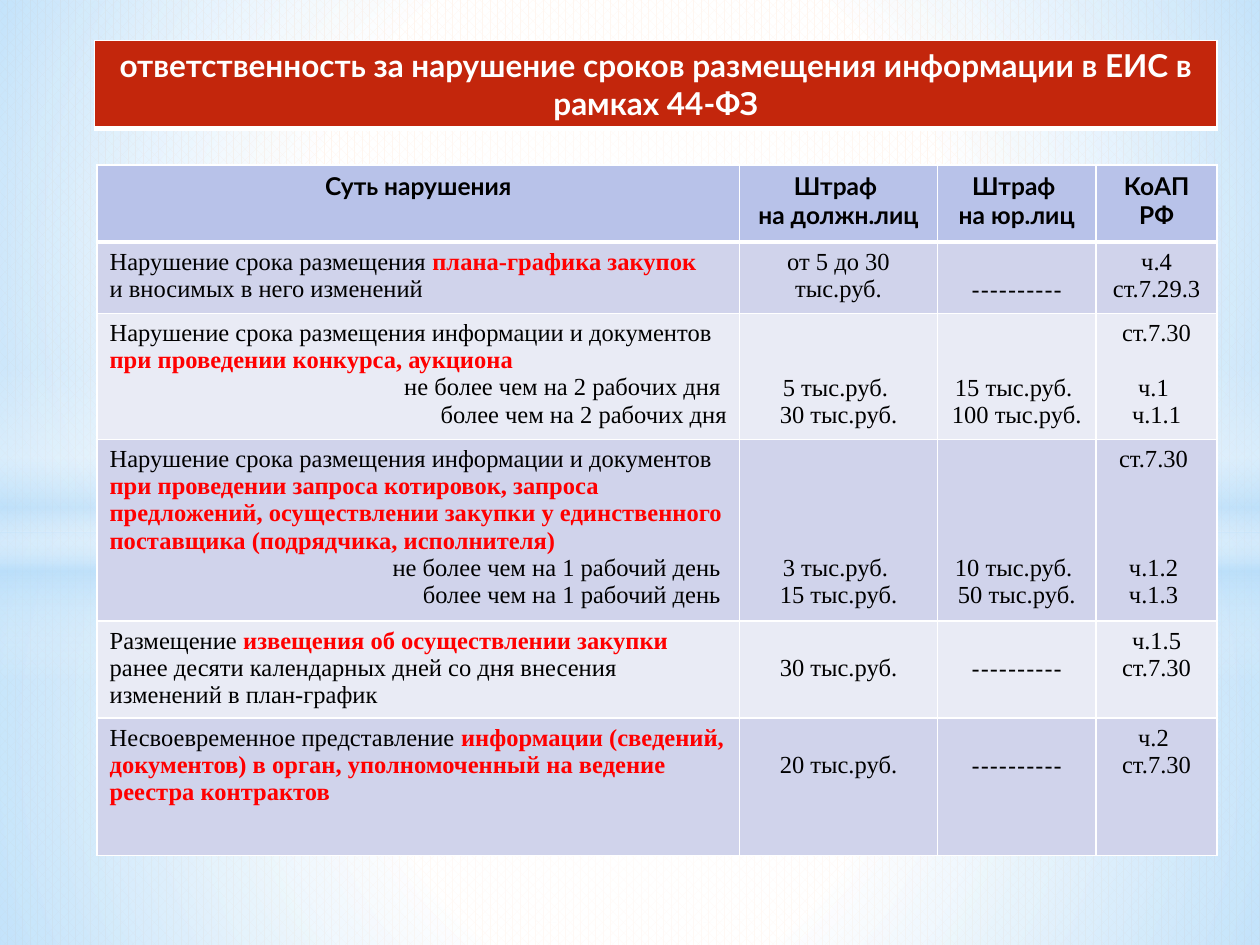
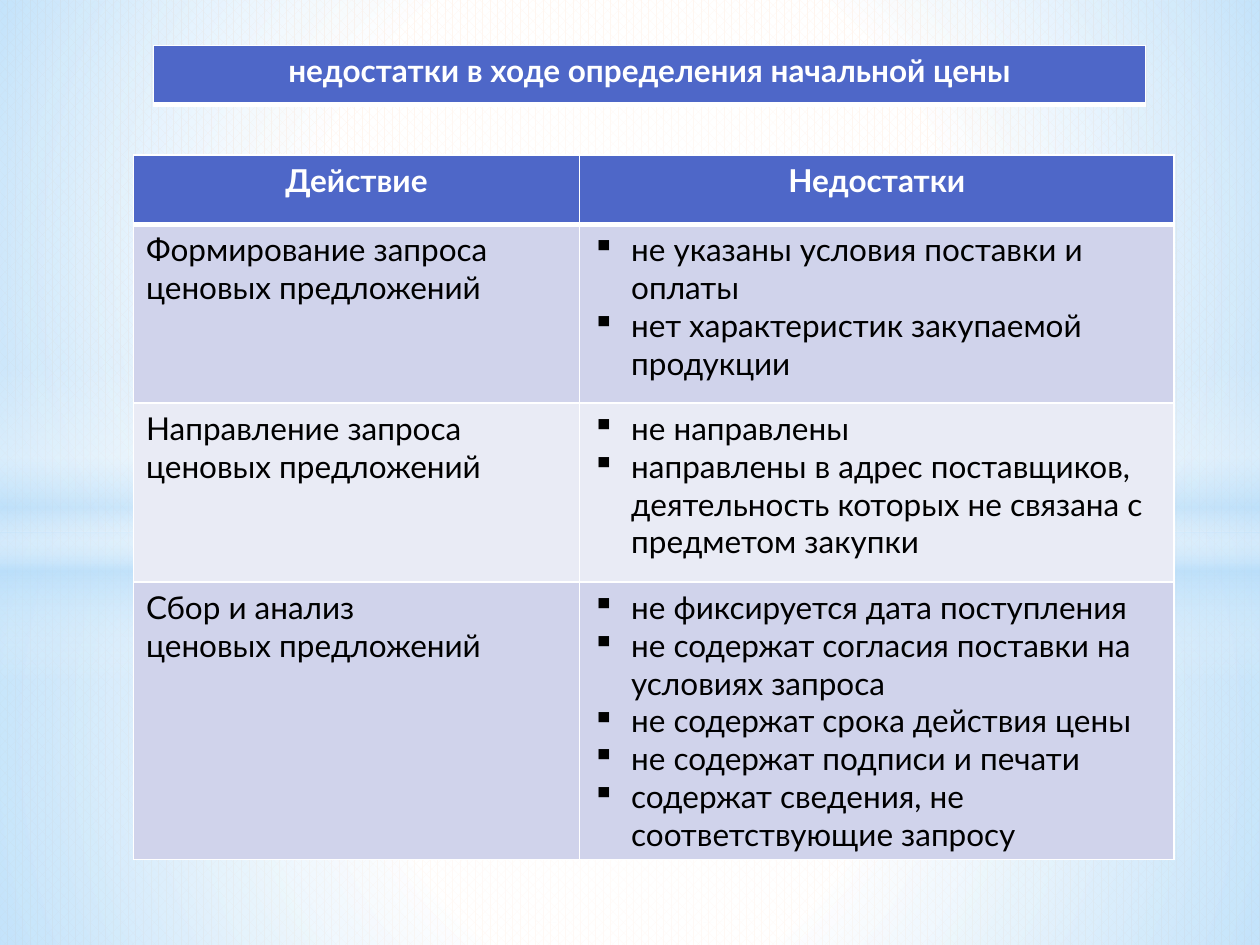
from dataclasses import dataclass

from lxml import etree
from pptx import Presentation
from pptx.dml.color import RGBColor
from pptx.enum.dml import MSO_PATTERN
from pptx.enum.shapes import MSO_SHAPE
from pptx.enum.text import PP_ALIGN
from pptx.oxml import parse_xml
from pptx.oxml.ns import nsdecls, qn
from pptx.util import Inches, Pt

LEFT, CENTER, RIGHT = PP_ALIGN.LEFT, PP_ALIGN.CENTER, PP_ALIGN.RIGHT
RECTANGLE, OVAL = MSO_SHAPE.RECTANGLE, MSO_SHAPE.OVAL


@dataclass(frozen=True)
class Theme:
    white: str = "FFFFFF"
    black: str = "000000"
    accent: str = "FF0000"
    sky: str = "B4DCFA"
    peach: str = "FFE6D3"
    alarm: str = "C3260C"
    blue: str = "4E67C8"
    pale_blue: str = "B8C2E9"
    bands: tuple = ("D0D3EB", "E9EBF5")
    sans: str = "Lato"
    serif: str = "Times New Roman"
    large: int = 18
    small: int = 14
    thin: int = 1
    thick: int = 3


THEME = Theme()


@dataclass(frozen=True)
class Line:
    """One paragraph; text between bars is emphasised, gap counts lines left free above."""
    text: str
    align: int = LEFT
    gap: int = 0
    bullet: bool = False


@dataclass(frozen=True)
class Cell:
    lines: list
    gap: int = 0
    font: str = THEME.sans


def offence(text, *terms):
    return Cell([Line(text)] + [Line(term, RIGHT) for term in terms], font=THEME.serif)


def centered(*texts, gap=0, font=THEME.serif):
    return Cell([Line(text, CENTER) for text in texts], gap, font)


def article(first, gap, *parts):
    """Article number on top, its parts lower down beside the fines."""
    lines = [Line(part, CENTER, 0 if index else gap) for index, part in enumerate(parts)]
    return Cell([Line(first, CENTER)] + lines, font=THEME.serif)


def header(*texts):
    return centered(*texts, font=THEME.sans)


def action(*texts):
    return Cell([Line(text) for text in texts])


def flaws(*texts):
    return Cell([Line(text, bullet=True) for text in texts])


NO_FINE = centered("----------", gap=1, font=THEME.sans)

FINES = [
    [header("Суть нарушения"), header("Штраф ", "на должн.лиц"),
     header("Штраф ", "на юр.лиц"), header("КоАП РФ")],
    [Cell([Line("Нарушение срока размещения |плана-графика закупок|"),
           Line("и вносимых в него изменений")], font=THEME.serif),
     centered("от 5 до 30 тыс.руб."), NO_FINE, centered("ч.4 ст.7.29.3")],
    [offence("Нарушение срока размещения информации и документов "
             "|при проведении конкурса, аукциона|",
             "не более чем на 2 рабочих дня ", "более чем на 2 рабочих дня"),
     centered("5 тыс.руб. ", "30 тыс.руб.", gap=2),
     centered("15 тыс.руб. ", "100 тыс.руб.", gap=2),
     article("ст.7.30", 1, "ч.1 ", "ч.1.1")],
    [offence("Нарушение срока размещения информации и документов "
             "|при проведении запроса котировок, запроса предложений, осуществлении "
             "закупки у единственного поставщика (подрядчика, исполнителя)|",
             "не более чем на 1 рабочий день ", "более чем на 1 рабочий день "),
     centered("3 тыс.руб. ", "15 тыс.руб.", gap=4),
     centered("10 тыс.руб. ", "50 тыс.руб.", gap=4),
     article("ст.7.30 ", 3, "ч.1.2 ", "ч.1.3 ")],
    [offence("Размещение |извещения об осуществлении закупки |"
             "ранее десяти календарных дней со дня внесения изменений в план-график"),
     centered("30 тыс.руб.", gap=1), NO_FINE, centered("ч.1.5 ст.7.30")],
    [offence("Несвоевременное представление |информации (сведений, документов) в орган, "
             "уполномоченный на ведение реестра контрактов|"),
     centered("20 тыс.руб.", gap=1), NO_FINE, centered("ч.2 ", "ст.7.30")],
]

PRICE_FLAWS = [
    [header("Действие"), header("Недостатки")],
    [action("Формирование запроса ценовых предложений"),
     flaws("не указаны условия поставки и оплаты", "нет характеристик закупаемой продукции")],
    [action("Направление запроса ценовых предложений"),
     flaws("не направлены", "направлены в адрес поставщиков, деятельность которых "
           "не связана с предметом закупки")],
    [action("Сбор и анализ", "ценовых предложений"),
     flaws("не фиксируется дата поступления",
           "не содержат согласия поставки на условиях запроса",
           "не содержат срока действия цены", "не содержат подписи и печати",
           "содержат сведения, не соответствующие запросу")],
]


def title(text):
    return [[header(text)]]


SLIDES = [
    [dict(rows=FINES, at=(0.77, 1.31), widths=(5.1, 1.57, 1.26, 0.96),
          heights=(0.61, 0.57, 1, 1.44, 0.77, 1.09), size=THEME.small,
          head_fill=THEME.pale_blue, head_color=THEME.black),
     dict(rows=title("ответственность за нарушение сроков размещения информации в ЕИС "
                     "в рамках 44-ФЗ"),
          at=(0.75, 0.32), widths=(8.91,), heights=(0.7,), head_fill=THEME.alarm)],
    [dict(rows=title("недостатки в ходе определения начальной цены"),
          at=(1.22, 0.36), widths=(7.87,), heights=(0.47,)),
     dict(rows=PRICE_FLAWS, at=(1.06, 1.23), widths=(3.54, 4.72),
          heights=(0.55, 1.42, 1.42, 2.2))],
]

RADIAL = ('<a:path path="circle"><a:fillToRect l="50000" t="50000" r="50000" b="50000"/>'
          '</a:path>')
VERTICAL = '<a:lin ang="5400000" scaled="0"/>'

# Shape, place, direction, then gradient stops as (position %, colour, opacity %)
GLOWS = [
    (RECTANGLE, (0, 4.23, 10, 3.27), RADIAL,
     [(0, THEME.white, 91), (37, THEME.white, 76), (100, THEME.sky, 79)]),
    (RECTANGLE, (0, 0, 10, 4.23), RADIAL,
     [(0, THEME.white, 89), (48, THEME.white, 62), (100, THEME.sky, 79)]),
    (RECTANGLE, (0, 2.9, 10, 2.5), VERTICAL,
     [(0, THEME.white, 0), (29, THEME.white, 30), (45, THEME.sky, 40),
      (55, THEME.white, 26), (65, THEME.sky, 60), (100, THEME.white, 0)]),
    (OVAL, (0, 1.75, 10, 5.58), RADIAL, [(0, THEME.white, 100), (54, THEME.white, 0)]),
]


def rgb(color):
    return RGBColor.from_string(color)


def paint_master(master, page):
    """Build the glows on a page and move them behind everything on the master."""
    fill = master.background.fill
    fill.patterned()
    fill.pattern = MSO_PATTERN.PERCENT_60
    fill.fore_color.rgb = rgb(THEME.peach)
    fill.back_color.rgb = rgb(THEME.white)
    for index, (kind, place, direction, stops) in enumerate(GLOWS):
        glow = page.shapes.add_shape(kind, *map(Inches, place))
        glow.shadow.inherit = False
        glow.line.fill.background()
        stop_xml = "".join(
            f'<a:gs pos="{position * 1000}"><a:srgbClr val="{color}">'
            f'<a:alpha val="{opacity * 1000}"/></a:srgbClr></a:gs>'
            for position, color, opacity in stops)
        gradient = parse_xml(f'<a:gradFill {nsdecls("a")} rotWithShape="1">'
                             f'<a:gsLst>{stop_xml}</a:gsLst>{direction}</a:gradFill>')
        glow.element.spPr.find(qn("a:prstGeom")).addnext(gradient)
        glow.element.nvSpPr.cNvPr.set("id", str(100 + index))
        master.shapes.element.insert(2 + index, glow.element)


def add_borders(cell, top, bottom):
    properties = cell._tc.get_or_add_tcPr()
    for side, width in zip("LRTB", (THEME.thin, THEME.thin, top, bottom)):
        properties.append(parse_xml(
            f'<a:ln{side} {nsdecls("a")} w="{Pt(width)}"><a:solidFill>'
            f'<a:srgbClr val="{THEME.white}"/></a:solidFill></a:ln{side}>'))


def add_bullet(para):
    properties = para._p.get_or_add_pPr()
    properties.set("marL", str(Inches(0.31)))
    properties.set("indent", str(-Inches(0.31)))
    etree.SubElement(properties, qn("a:buChar"), char="▪")


def write_cell(cell, content, size, color, bold):
    line_height = Pt(size * 1.11)
    cell.margin_top = Inches(0.05) + content.gap * line_height
    frame = cell.text_frame
    for index, line in enumerate(content.lines):
        para = frame.add_paragraph() if index else frame.paragraphs[0]
        para.alignment = line.align
        if line.gap:
            para.space_before = line.gap * line_height
        if line.bullet:
            add_bullet(para)
        for part, text in enumerate(line.text.split("|")):
            if not text:
                continue
            emphasised = part % 2 == 1
            span = para.add_run()
            span.text = text
            span.font.name = content.font
            span.font.size = Pt(size)
            span.font.bold = bold or emphasised
            span.font.color.rgb = rgb(THEME.accent if emphasised else color)


def add_grid(page, rows, at, widths, heights, size=THEME.large,
             head_fill=THEME.blue, head_color=THEME.white):
    left, top = at
    places = map(Inches, (left, top, sum(widths), sum(heights)))
    table = page.shapes.add_table(len(rows), len(widths), *places).table
    table.first_row = table.horz_banding = False
    for column, width in zip(table.columns, widths):
        column.width = Inches(width)
    for index, (row, height) in enumerate(zip(table.rows, heights)):
        row.height = Inches(height)
        is_head = index == 0
        fill = head_fill if is_head else THEME.bands[(index - 1) % 2]
        for cell, content in zip(row.cells, rows[index]):
            add_borders(cell, THEME.thick if index == 1 else THEME.thin,
                        THEME.thick if is_head else THEME.thin)
            cell.fill.solid()
            cell.fill.fore_color.rgb = rgb(fill)
            write_cell(cell, content, size, head_color if is_head else THEME.black, is_head)


def main():
    deck = Presentation()
    deck.slide_width, deck.slide_height = Inches(10), Inches(7.5)
    blank = deck.slide_layouts[6]
    pages = [deck.slides.add_slide(blank) for _ in SLIDES]
    paint_master(deck.slide_master, pages[0])
    for page, grids in zip(pages, SLIDES):
        for grid in grids:
            add_grid(page, **grid)
    deck.save("out.pptx")


if __name__ == "__main__":
    main()
